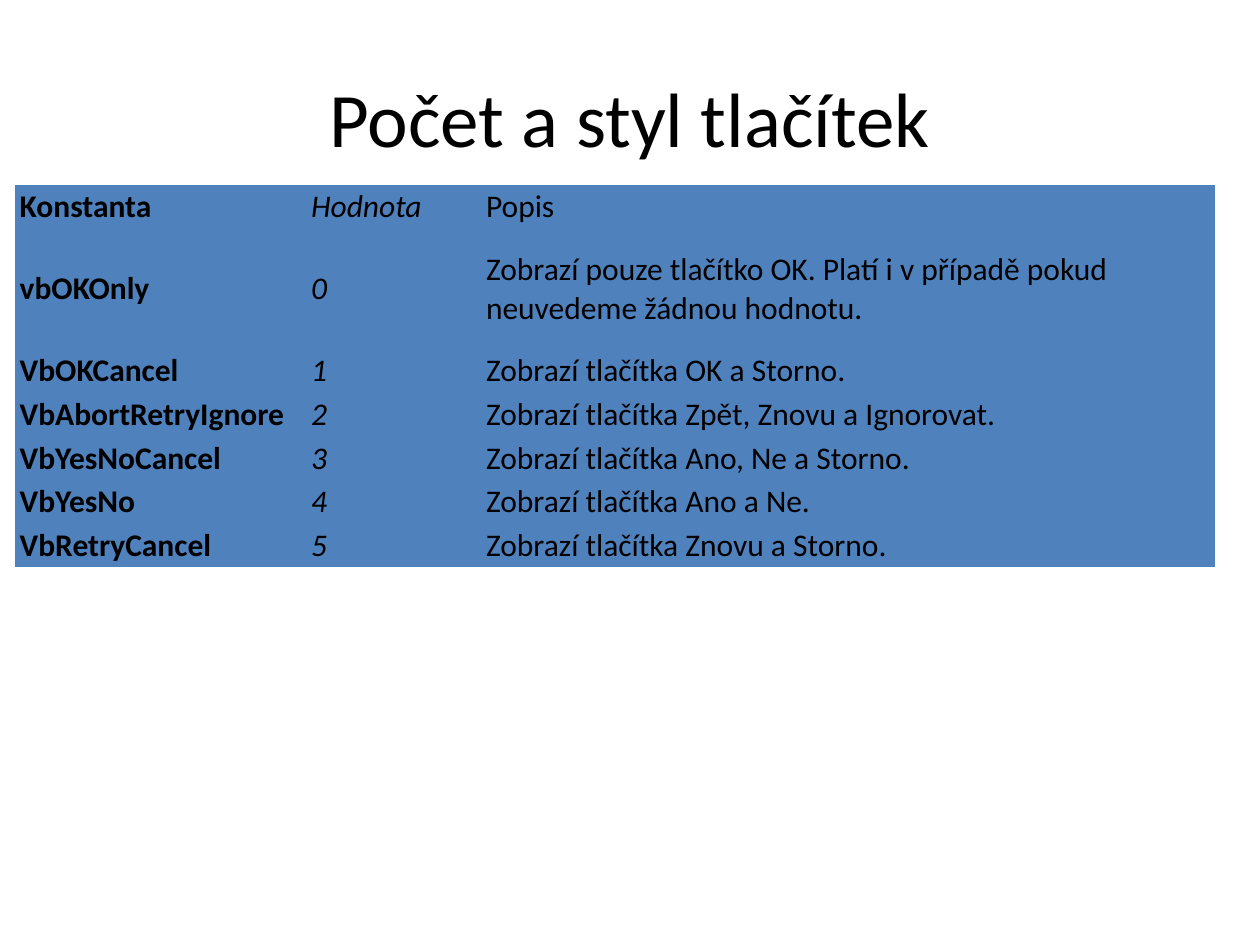
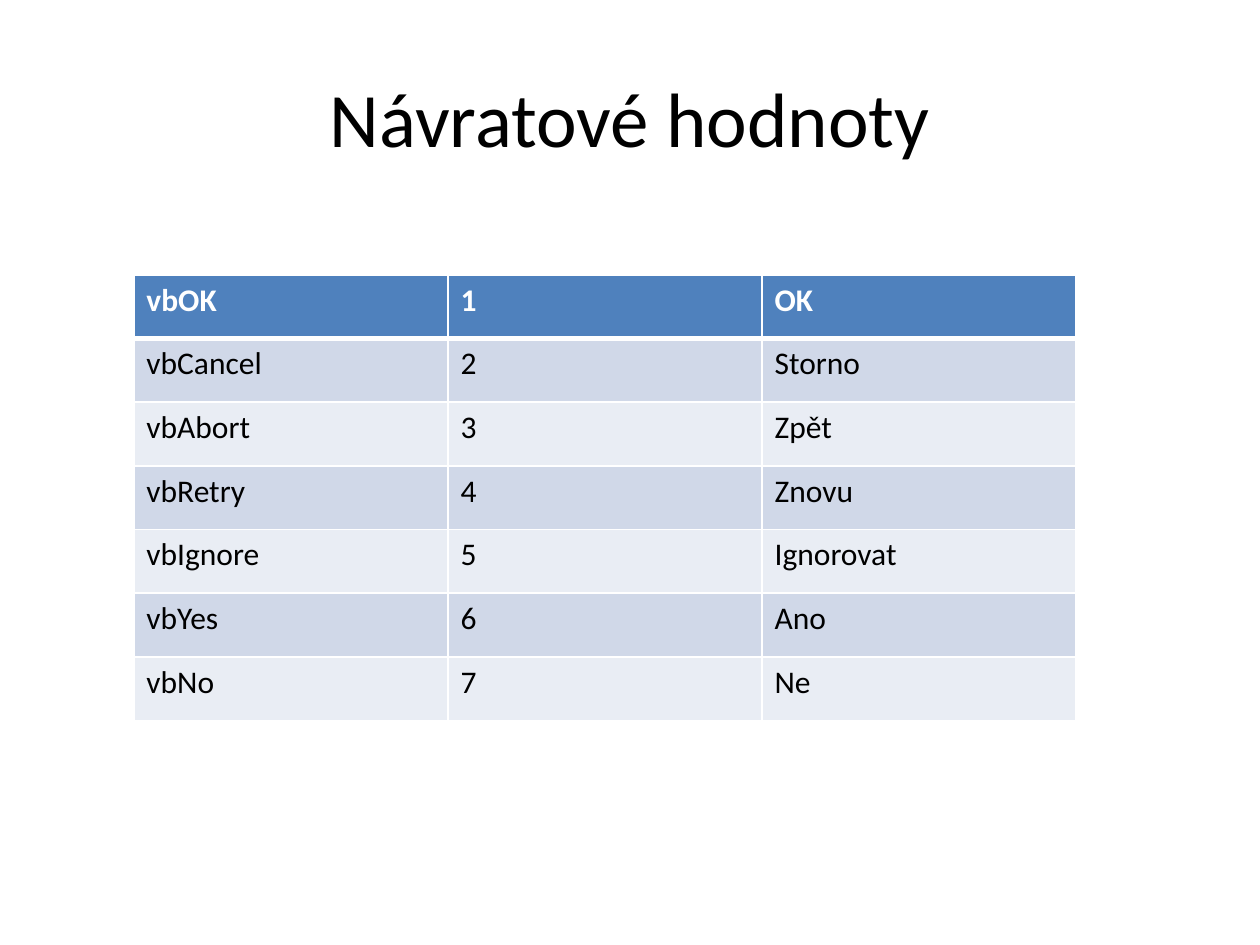
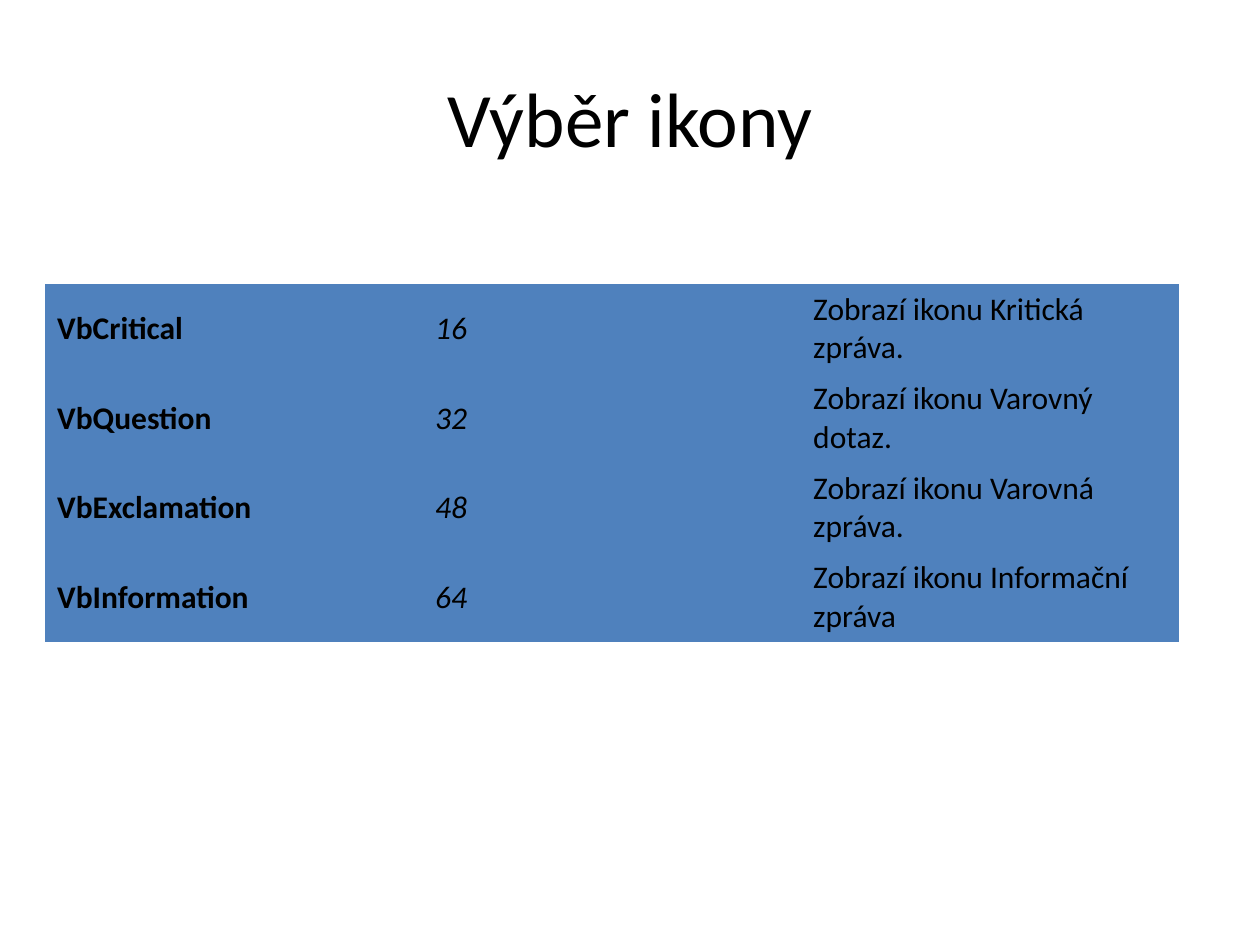
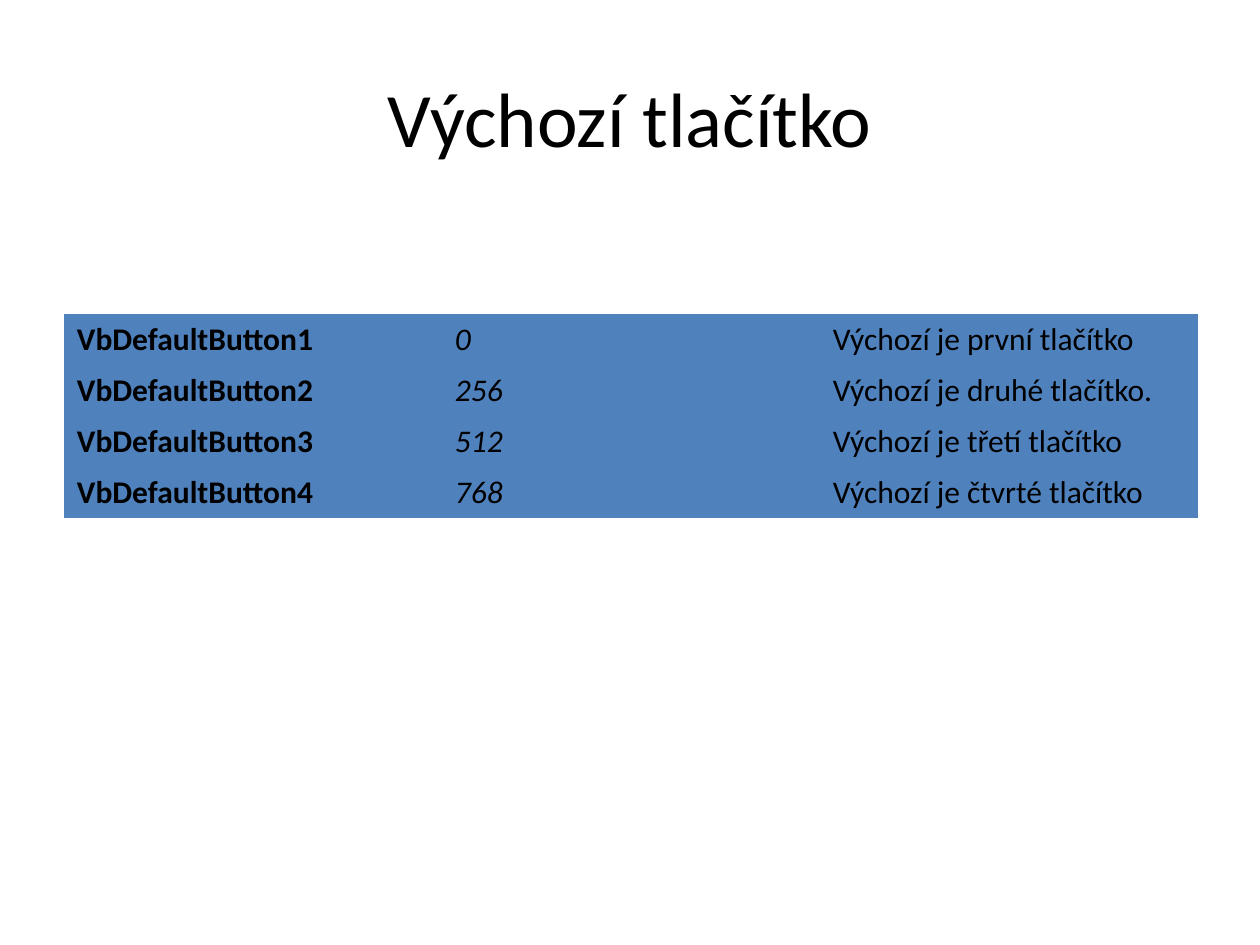
from lxml import etree
from pptx import Presentation
from pptx.dml.color import RGBColor
from pptx.enum.text import MSO_ANCHOR, PP_ALIGN
from pptx.oxml.ns import qn
from pptx.util import Pt

MIDDLE, TOP = MSO_ANCHOR.MIDDLE, MSO_ANCHOR.TOP
CENTER = PP_ALIGN.CENTER

BLACK = RGBColor(0x00, 0x00, 0x00)
WHITE = RGBColor(0xFF, 0xFF, 0xFF)
BLUE = RGBColor(0x4F, 0x81, 0xBD)
BAND_DARK = RGBColor(0xD0, 0xD8, 0xE8)
BAND_LIGHT = RGBColor(0xE9, 0xED, 0xF4)

FONT = "Calibri"
TITLE_SIZE, CELL_SIZE = Pt(44), Pt(18)
TITLE_BOX = (36, 21.6, 648, 90)
TITLE_ONLY = 5
CELL_MARGINS = (7.2, 3.6)
TIGHT_MARGINS = (2.8, 1.4)
PLAIN_STYLE = "{2D5ABB26-0587-4C30-8999-92F81FD0307C}"

BUTTON_STYLES = [
    ("Konstanta", "Hodnota", "Popis"),
    ("vbOKOnly", "0", "Zobrazí pouze tlačítko OK. Platí i v případě pokud neuvedeme žádnou hodnotu."),
    ("VbOKCancel", "1", "Zobrazí tlačítka OK a Storno."),
    ("VbAbortRetryIgnore", "2", "Zobrazí tlačítka Zpět, Znovu a Ignorovat."),
    ("VbYesNoCancel", "3", "Zobrazí tlačítka Ano, Ne a Storno."),
    ("VbYesNo", "4", "Zobrazí tlačítka Ano a Ne."),
    ("VbRetryCancel", "5", "Zobrazí tlačítka Znovu a Storno."),
]
RETURN_VALUES = [
    ("vbOK", "1", "OK"),
    ("vbCancel", "2", "Storno"),
    ("vbAbort", "3", "Zpět"),
    ("vbRetry", "4", "Znovu"),
    ("vbIgnore", "5", "Ignorovat"),
    ("vbYes", "6", "Ano"),
    ("vbNo", "7", "Ne"),
]
ICONS = [
    ("VbCritical", "16", "Zobrazí ikonu Kritická zpráva."),
    ("VbQuestion", "32", "Zobrazí ikonu Varovný dotaz."),
    ("VbExclamation", "48", "Zobrazí ikonu Varovná zpráva."),
    ("VbInformation", "64", "Zobrazí ikonu Informační zpráva"),
]
DEFAULT_BUTTONS = [
    ("VbDefaultButton1", "0", "Výchozí je první tlačítko"),
    ("VbDefaultButton2", "256", "Výchozí je druhé tlačítko."),
    ("VbDefaultButton3", "512", "Výchozí je třetí tlačítko"),
    ("VbDefaultButton4", "768", "Výchozí je čtvrté tlačítko"),
]


def add_run(paragraph, text, size, color, bold=False, italic=False):
    run = paragraph.add_run()
    run.text = text
    font = run.font
    font.name, font.size, font.color.rgb = FONT, size, color
    font.bold, font.italic = bold, italic


def add_titled_slide(deck, heading):
    slide = deck.slides.add_slide(deck.slide_layouts[TITLE_ONLY])
    title = slide.shapes.title
    title.left, title.top, title.width, title.height = map(Pt, TITLE_BOX)
    title.text_frame.vertical_anchor = MIDDLE
    paragraph = title.text_frame.paragraphs[0]
    paragraph.alignment = CENTER
    add_run(paragraph, heading, TITLE_SIZE, BLACK)
    return slide


def add_grid(slide, origin, widths, heights):
    """Add an unstyled table at origin, sized by its columns and rows."""
    left, top = origin
    table = slide.shapes.add_table(
        len(heights), len(widths), Pt(left), Pt(top), Pt(sum(widths)), Pt(sum(heights))
    ).table
    table.first_row = table.horz_banding = False
    table._tbl.tblPr.find(qn("a:tableStyleId")).text = PLAIN_STYLE
    for column, width in zip(table.columns, widths):
        column.width = Pt(width)
    for row, height in zip(table.rows, heights):
        row.height = Pt(height)
    return table


def fill_cell(cell, text, fill, color=BLACK, bold=False, italic=False,
              anchor=TOP, margins=CELL_MARGINS):
    cell.margin_left = cell.margin_right = Pt(margins[0])
    cell.margin_top = cell.margin_bottom = Pt(margins[1])
    cell.vertical_anchor = anchor
    cell.fill.solid()
    cell.fill.fore_color.rgb = fill
    add_run(cell.text_frame.paragraphs[0], text, CELL_SIZE, color, bold, italic)


def set_borders(cell, top, bottom, side=1):
    """Draw white cell borders; must run before the cell gets its fill."""
    properties = cell._tc.get_or_add_tcPr()
    for tag, width in (("lnL", side), ("lnR", side), ("lnT", top), ("lnB", bottom)):
        line = etree.SubElement(properties, qn(f"a:{tag}"), w=str(Pt(width)))
        solid = etree.SubElement(line, qn("a:solidFill"))
        etree.SubElement(solid, qn("a:srgbClr"), val=str(WHITE))


def constants_slide(deck, heading, rows, origin, widths, heights, margins=CELL_MARGINS):
    """Blue table: bold constant, italic value, plain description."""
    table = add_grid(add_titled_slide(deck, heading), origin, widths, heights)
    for r, texts in enumerate(rows):
        for c, text in enumerate(texts):
            fill_cell(table.cell(r, c), text, BLUE, bold=c == 0, italic=c == 1,
                      anchor=MIDDLE, margins=margins)


def banded_slide(deck, heading, rows, origin, widths, heights):
    """Table with a blue first row, alternating bands and white rules."""
    table = add_grid(add_titled_slide(deck, heading), origin, widths, heights)
    for r, texts in enumerate(rows):
        first = r == 0
        fill = BLUE if first else (BAND_LIGHT, BAND_DARK)[r % 2]
        for c, text in enumerate(texts):
            cell = table.cell(r, c)
            set_borders(cell, top=3 if r == 1 else 1, bottom=3 if first else 1)
            fill_cell(cell, text, fill, color=WHITE if first else BLACK, bold=first)


def main():
    deck = Presentation()
    deck.slide_width, deck.slide_height = Pt(720), Pt(540)
    constants_slide(deck, "Počet a styl tlačítek", BUTTON_STYLES, (8.5, 105.75),
                    [166.5, 100, 419.5], [24.9, 69] + [24.9] * 5, TIGHT_MARGINS)
    banded_slide(deck, "Návratové hodnoty", RETURN_VALUES, (76.5, 157),
                 [179.5] * 3, [36.4] * 7)
    constants_slide(deck, "Výběr ikony", ICONS, (25.5, 162.25), [216] * 3, [51.1] * 4)
    constants_slide(deck, "Výchozí tlačítko", DEFAULT_BUTTONS, (36.75, 179.5),
                    [216] * 3, [29.15] * 4)
    deck.save("out.pptx")


if __name__ == "__main__":
    main()
